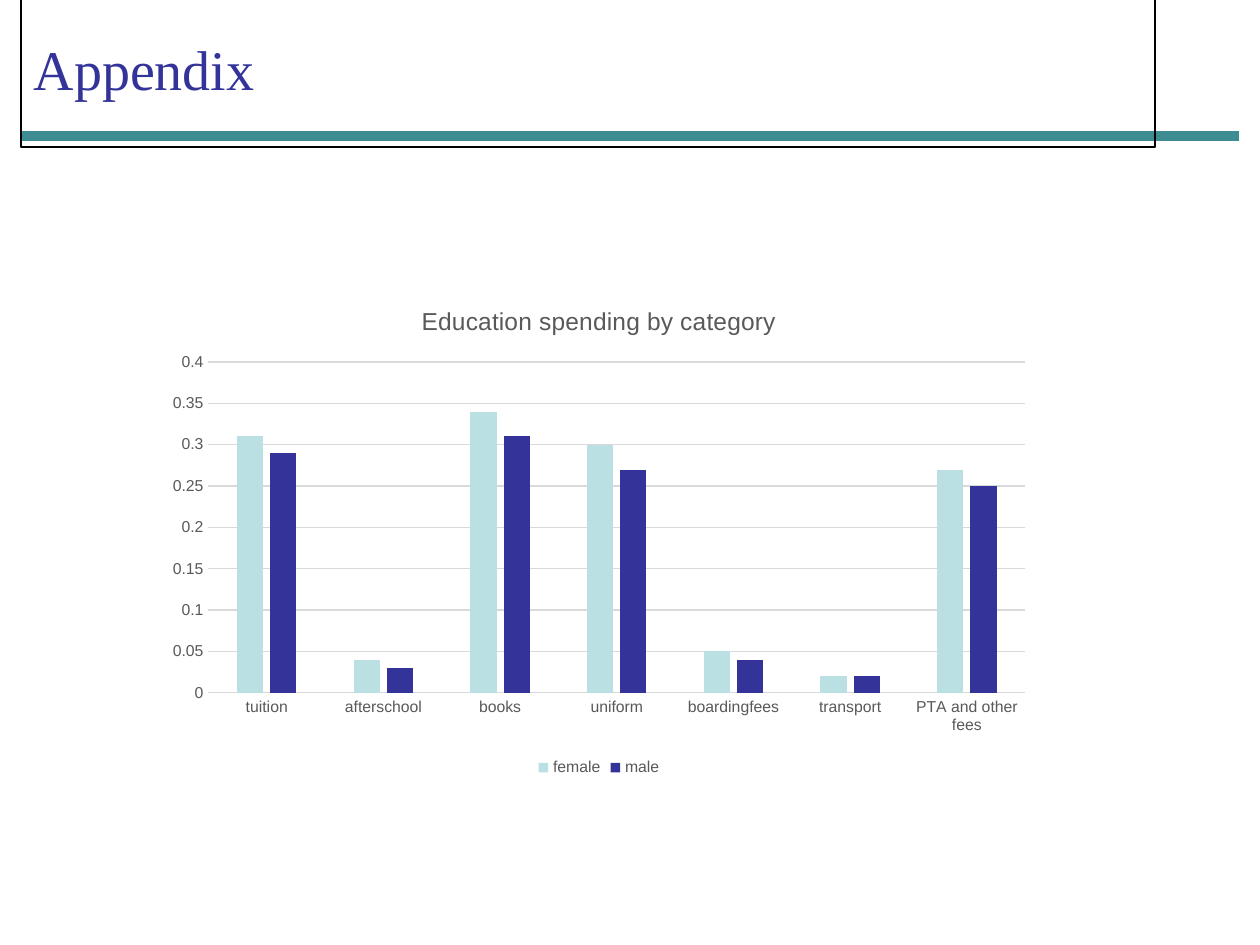
from lxml import etree
from pptx import Presentation
from pptx.chart.data import CategoryChartData
from pptx.dml.color import RGBColor
from pptx.enum.chart import XL_CHART_TYPE, XL_LEGEND_POSITION, XL_TICK_MARK
from pptx.enum.shapes import MSO_CONNECTOR
from pptx.enum.text import MSO_ANCHOR, PP_ALIGN
from pptx.oxml.ns import qn
from pptx.util import Emu, Pt

COLUMNS = XL_CHART_TYPE.COLUMN_CLUSTERED
LEGEND_BOTTOM = XL_LEGEND_POSITION.BOTTOM
NO_TICK = XL_TICK_MARK.NONE
STRAIGHT = MSO_CONNECTOR.STRAIGHT
MIDDLE = MSO_ANCHOR.MIDDLE
LEFT = PP_ALIGN.LEFT

# Content
TITLE = "Appendix"
CHART_TITLE = "Education spending by category"
CATEGORIES = ["tuition", "afterschool", "books", "uniform",
              "boardingfees", "transport", "PTA and other fees"]
SERIES = [
    ("female", "BBE0E3", [0.31, 0.04, 0.34, 0.3, 0.05, 0.02, 0.27]),
    ("male", "333399", [0.29, 0.03, 0.31, 0.27, 0.04, 0.02, 0.25]),
]

# Layout in px
SLIDE_SIZE = (1260, 945)
TITLE_BOX = (21, -10, 1134, 157)
RULE = (21, 136, 1239, 136)
CHART_BOX = (155, 284, 888, 498)

BLACK, TEAL, NAVY, GREY, PALE_GREY = "000000", "3C8C92", "333399", "595959", "D9D9D9"


def px(*lengths):
    return [Emu(length * 914400 // 126) for length in lengths]


def color(value):
    return RGBColor.from_string(value)


def set_font(font, size, value, name="Arial"):
    font.name, font.size, font.bold = name, Pt(size), False
    font.color.rgb = color(value)


def set_line(line, value, width):
    line.color.rgb = color(value)
    line.width = Pt(width)


presentation = Presentation()
presentation.slide_width, presentation.slide_height = px(*SLIDE_SIZE)
slide = presentation.slides.add_slide(presentation.slide_layouts[5])

# Title
title = slide.shapes.title
title.left, title.top, title.width, title.height = px(*TITLE_BOX)
set_line(title.line, BLACK, 0.75)
frame = title.text_frame
frame.word_wrap = True
frame.vertical_anchor = MIDDLE
paragraph = frame.paragraphs[0]
paragraph.alignment = LEFT
run = paragraph.add_run()
run.text = TITLE
set_font(run.font, 32, NAVY, "Times New Roman")

# Rule, placed behind the title
rule = slide.shapes.add_connector(STRAIGHT, *px(*RULE))
set_line(rule.line, TEAL, 6)
etree.SubElement(rule.element.spPr, qn("a:effectLst"))
title.element.addprevious(rule.element)

# Chart
data = CategoryChartData()
data.categories = CATEGORIES
for name, _, values in SERIES:
    data.add_series(name, values)
chart = slide.shapes.add_chart(COLUMNS, *px(*CHART_BOX), data).chart
set_font(chart.font, 10, BLACK)
chart.has_title = True
run = chart.chart_title.text_frame.paragraphs[0].add_run()
run.text = CHART_TITLE
set_font(run.font, 14, GREY)
chart.chart_title.include_in_layout = False

plot = chart.plots[0]
plot.gap_width, plot.overlap, plot.vary_by_categories = 219, -27, False
for series, (_, fill, _) in zip(plot.series, SERIES):
    series.format.fill.solid()
    series.format.fill.fore_color.rgb = color(fill)

# Axes and legend
category_axis, value_axis = chart.category_axis, chart.value_axis
for axis in (category_axis, value_axis):
    axis.major_tick_mark = axis.minor_tick_mark = NO_TICK
    set_font(axis.tick_labels.font, 9, GREY)
set_line(category_axis.format.line, PALE_GREY, 0.75)
value_axis.format.line.fill.background()
value_axis.minimum_scale, value_axis.maximum_scale, value_axis.major_unit = 0, 0.4, 0.05
value_axis.tick_labels.number_format = "General"
value_axis.tick_labels.number_format_is_linked = False
set_line(value_axis.major_gridlines.format.line, PALE_GREY, 0.75)

chart.has_legend = True
chart.legend.position = LEGEND_BOTTOM
chart.legend.include_in_layout = False
set_font(chart.legend.font, 9, GREY)

presentation.save("out.pptx")
